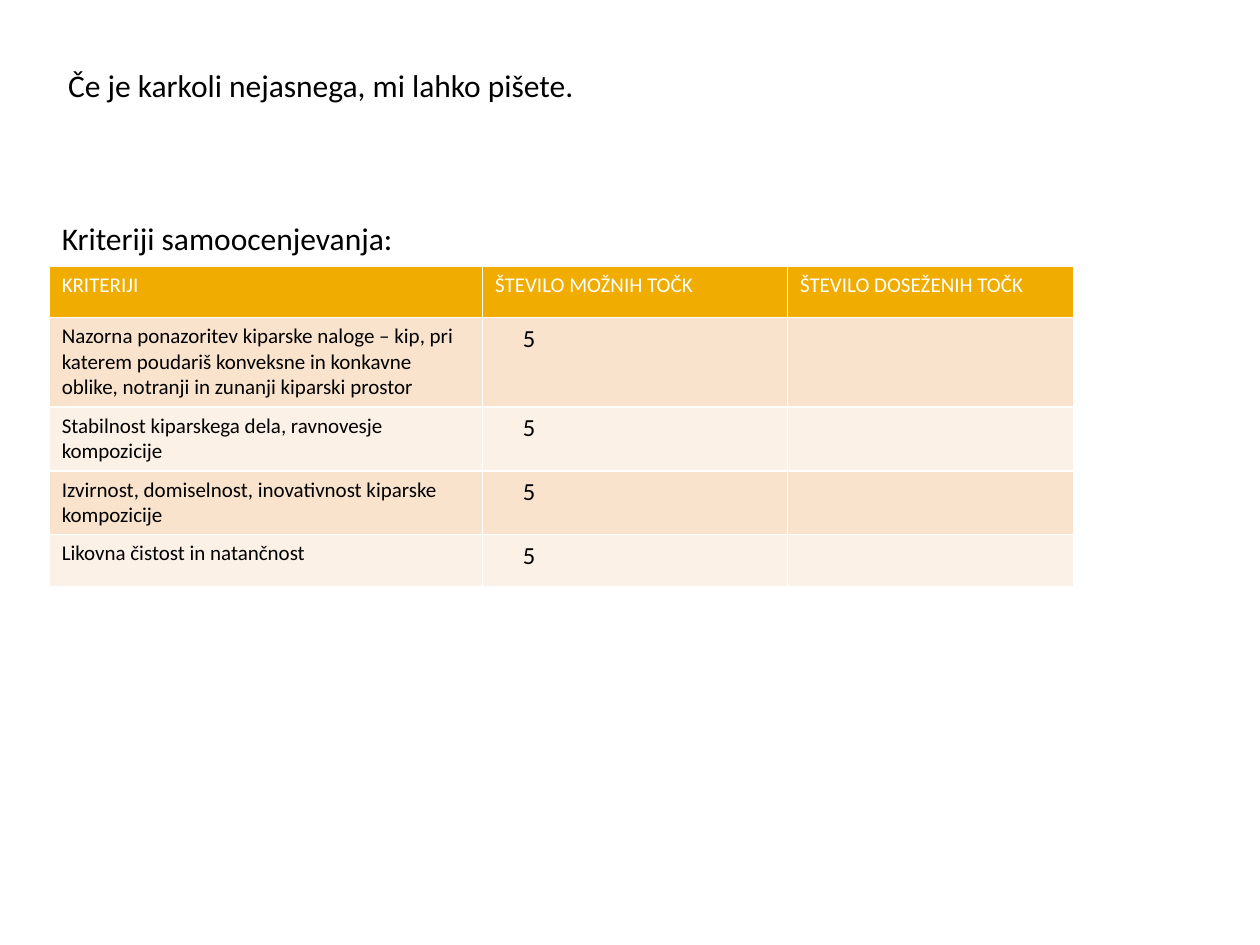
"""Build the slide with the self-assessment criteria table."""
from dataclasses import dataclass

from pptx import Presentation
from pptx.dml.color import RGBColor
from pptx.enum.text import MSO_ANCHOR, MSO_AUTO_SIZE, PP_ALIGN
from pptx.slide import Slide
from pptx.util import Inches, Pt

SLIDE_WIDTH, SLIDE_HEIGHT = Inches(10), Inches(7.5)
FONT = "Calibri"
BLACK = RGBColor(0x00, 0x00, 0x00)
WHITE = RGBColor(0xFF, 0xFF, 0xFF)
HEADER_FILL = RGBColor(0xF0, 0xAD, 0x00)
BAND_FILLS = (RGBColor(0xF9, 0xE3, 0xCC), RGBColor(0xFC, 0xF1, 0xE7))

LEFT = 3.9
TABLE_TOP = 28.13
COLUMN_SHARES = (34.4, 24.2, 22.7)
ROW_SHARE = 5.47
HEADERS = ("KRITERIJI", "ŠTEVILO MOŽNIH TOČK", "ŠTEVILO DOSEŽENIH TOČK")


@dataclass(frozen=True)
class Criterion:
    description: str
    points: int = 5


CRITERIA = (
    Criterion("Nazorna ponazoritev kiparske naloge – kip, pri katerem poudariš "
              "konveksne in konkavne oblike, notranji in zunanji kiparski prostor"),
    Criterion("Stabilnost kiparskega dela, ravnovesje kompozicije"),
    Criterion("Izvirnost, domiselnost, inovativnost kiparske kompozicije"),
    Criterion("Likovna čistost in natančnost"),
)


def across(percent: float) -> int:
    return round(SLIDE_WIDTH * percent / 100)


def down(percent: float) -> int:
    return round(SLIDE_HEIGHT * percent / 100)


def write(paragraph, text: str, *, size: float, color: RGBColor = BLACK,
          indent: float = 0, space_before: float = 0) -> None:
    paragraph.alignment = PP_ALIGN.LEFT
    paragraph.space_before = Pt(space_before)
    paragraph._p.get_or_add_pPr().set("marL", str(Inches(indent)))
    run = paragraph.add_run()
    run.text = text
    run.font.name = FONT
    run.font.size = Pt(size)
    run.font.bold = False
    run.font.color.rgb = color


def draw_title(slide: Slide) -> None:
    title = slide.shapes.title
    title.left, title.top = across(LEFT), down(6.27)
    title.width, title.height = across(91.4), down(21.6)
    frame = title.text_frame
    frame.word_wrap = True
    frame.auto_size = MSO_AUTO_SIZE.NONE
    frame.vertical_anchor = MSO_ANCHOR.TOP
    write(frame.paragraphs[0], "Če je karkoli nejasnega, mi lahko pišete.",
          size=18, indent=0.05)
    write(frame.add_paragraph(), "Kriteriji samoocenjevanja:", size=18, space_before=66)


def fill_cell(cell, color: RGBColor) -> None:
    cell.fill.solid()
    cell.fill.fore_color.rgb = color


def draw_table(slide: Slide) -> None:
    row_count = len(CRITERIA) + 1
    table = slide.shapes.add_table(
        row_count, len(HEADERS), across(LEFT), down(TABLE_TOP),
        across(sum(COLUMN_SHARES)), down(ROW_SHARE * row_count)).table
    for column, share in zip(table.columns, COLUMN_SHARES):
        column.width = across(share)
    for cell, header in zip(table.rows[0].cells, HEADERS):
        fill_cell(cell, HEADER_FILL)
        write(cell.text_frame.paragraphs[0], header, size=12, color=WHITE)
    for index, criterion in enumerate(CRITERIA):
        cells = list(table.rows[index + 1].cells)
        for cell in cells:
            fill_cell(cell, BAND_FILLS[index % len(BAND_FILLS)])
        write(cells[0].text_frame.paragraphs[0], criterion.description, size=12)
        write(cells[1].text_frame.paragraphs[0], str(criterion.points), size=14, indent=0.22)


def main() -> None:
    presentation = Presentation()
    presentation.slide_width, presentation.slide_height = SLIDE_WIDTH, SLIDE_HEIGHT
    slide = presentation.slides.add_slide(presentation.slide_layouts.get_by_name("Title Only"))
    draw_title(slide)
    draw_table(slide)
    presentation.save("out.pptx")


if __name__ == "__main__":
    main()
